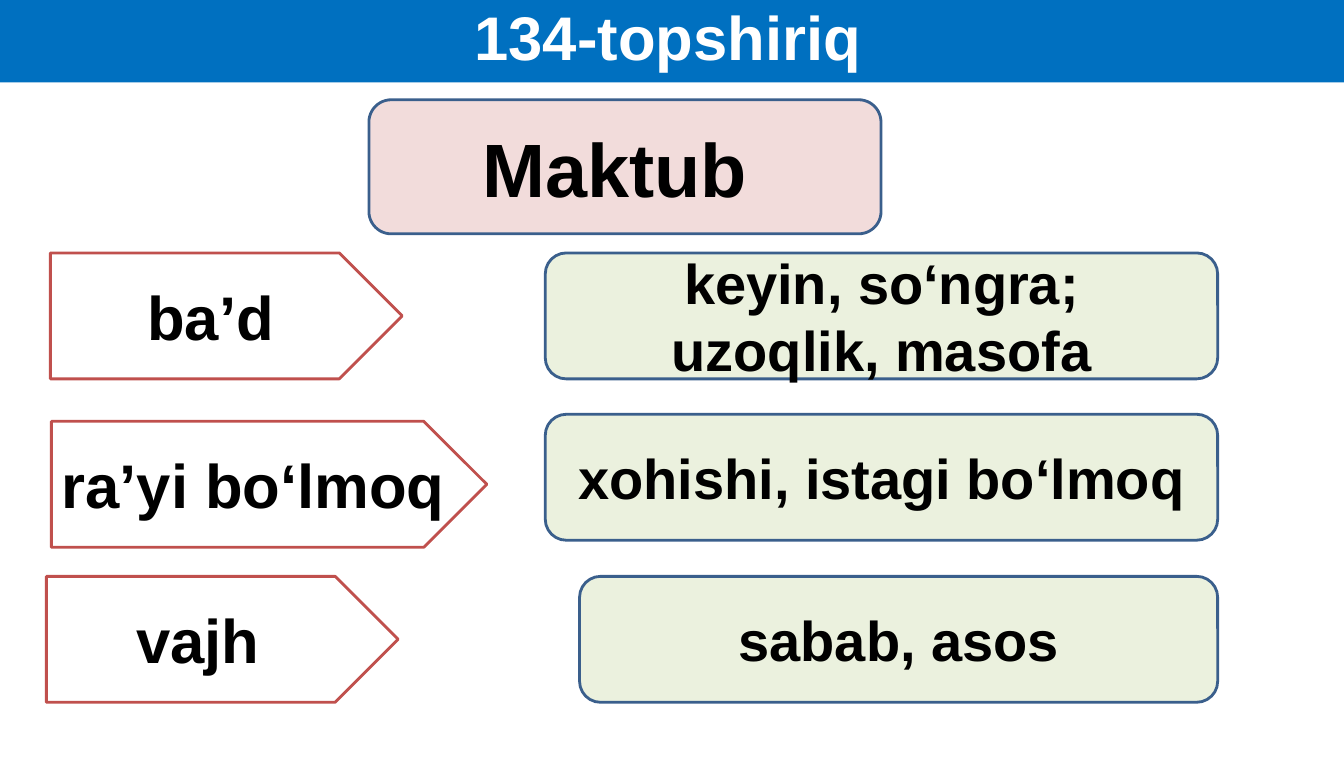
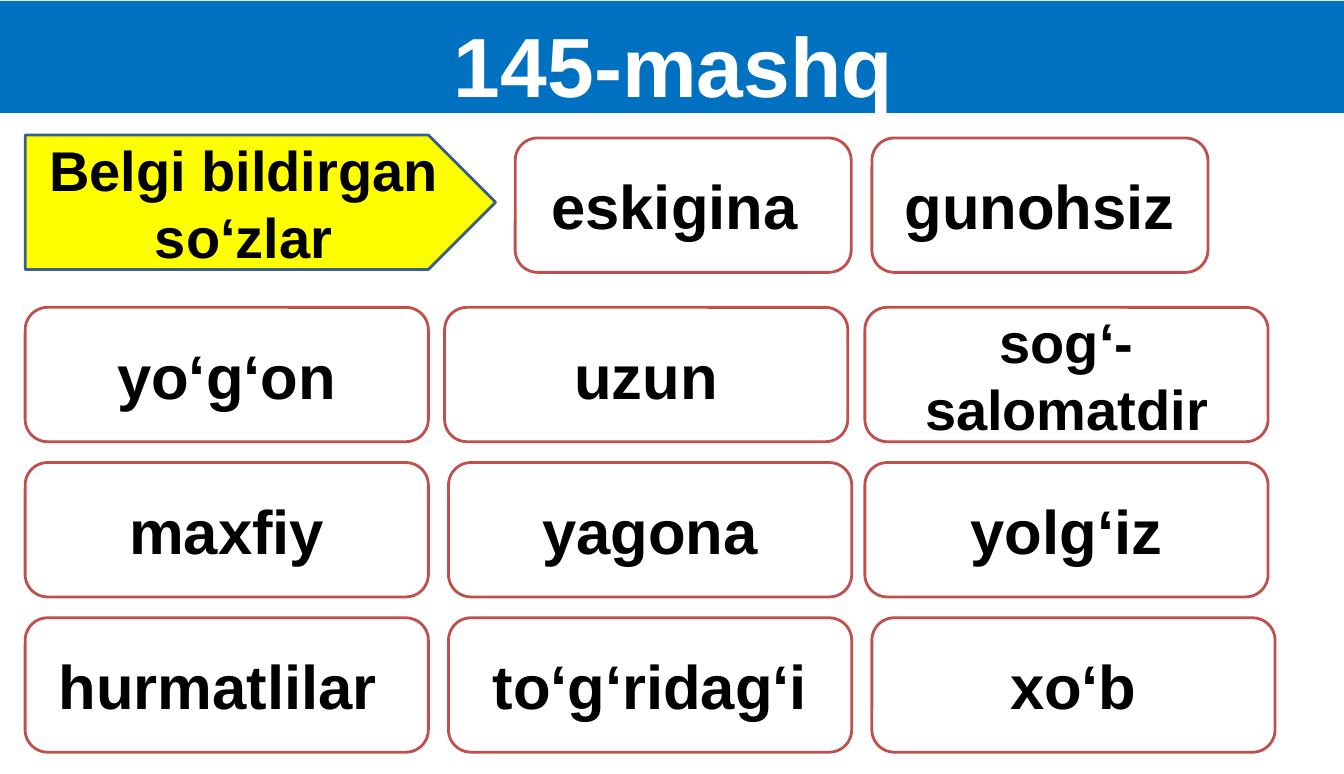
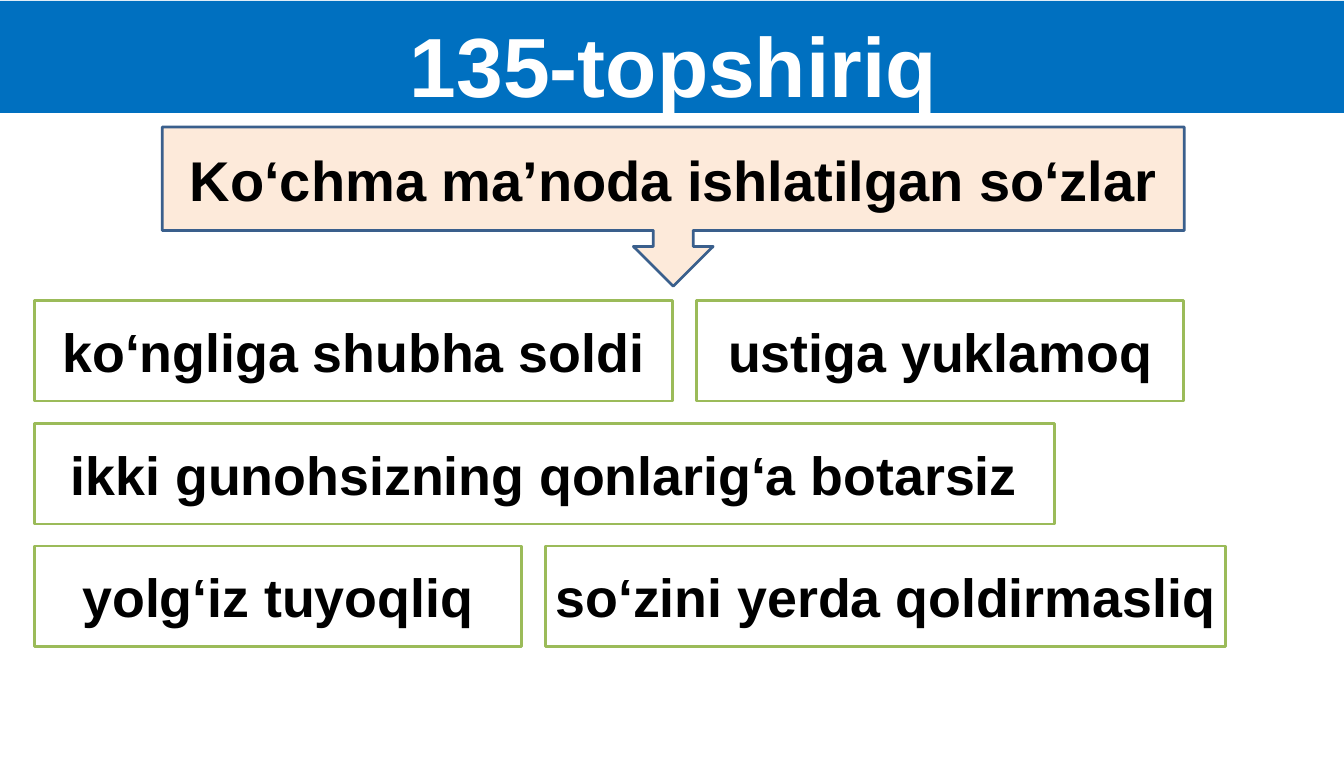
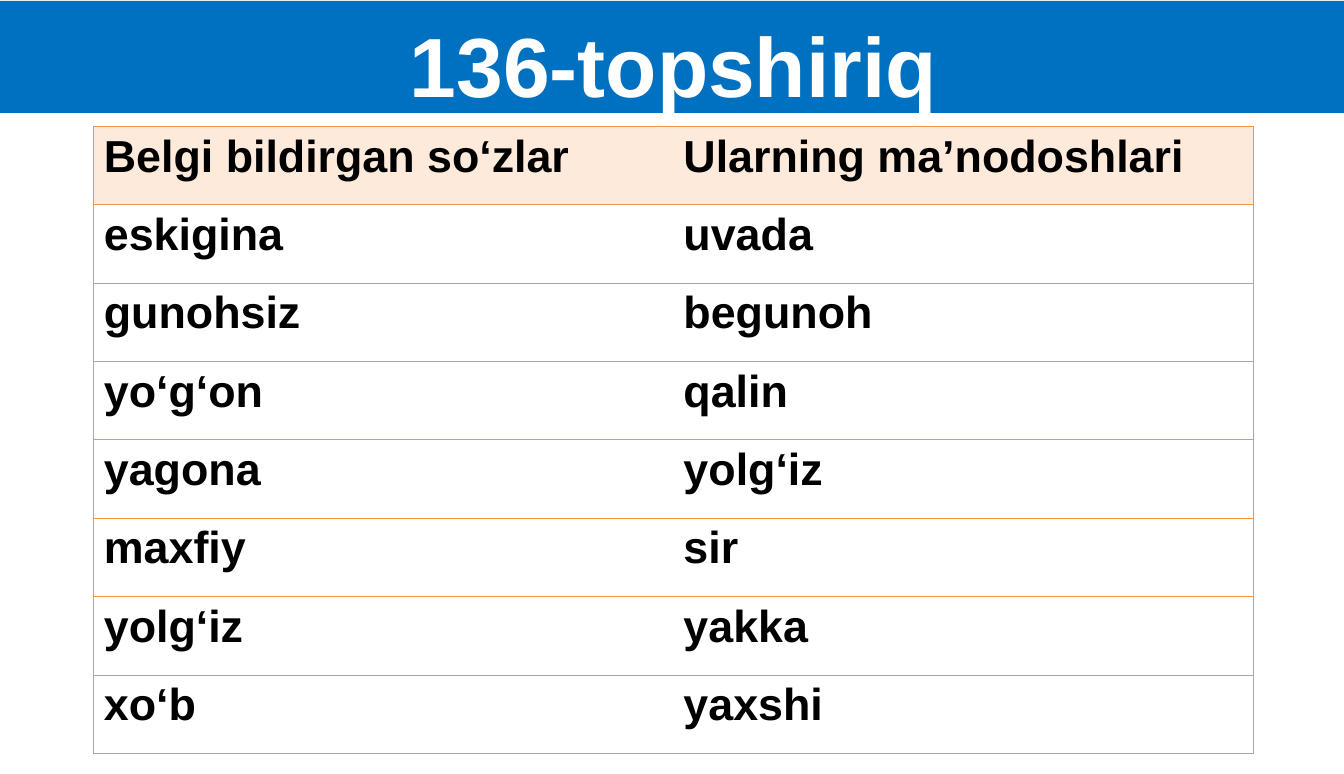
import pptx
import pptx.dml.color
import pptx.enum.shapes
import pptx.enum.text
import pptx.oxml
import pptx.oxml.ns
import pptx.util

Pt = pptx.util.Pt
Kind = pptx.enum.shapes.MSO_SHAPE
Anchor = pptx.enum.text.MSO_ANCHOR
Align = pptx.enum.text.PP_ALIGN


class Theme:
    face = "Arial"
    white, black = "FFFFFF", "000000"
    blue, navy, red, green = "0070C0", "3A5F8C", "C0504D", "9BBB59"
    pink, lime, peach, yellow = "F2DCDB", "EBF1DE", "FDEADA", "FFFF00"
    orange, grey = "F69240", "A6A6A6"
    huge, big, head, word, note, small = 60, 54, 44, 40, 38.4, 32
    edge, rule = 2, 0.75


def color(code):
    return pptx.dml.color.RGBColor.from_string(code)


def apply(target, form):
    for name, value in form.items():
        setattr(target, name, value)


class Deck:
    def __init__(self, wide, high):
        self.file = pptx.Presentation()
        apply(self.file, {"slide_width": Pt(wide), "slide_height": Pt(high)})
        self.slide = None

    def page(self):
        self.slide = self.file.slides.add_slide(self.file.slide_layouts[6])

    def label(self, frame, text, size, ink=Theme.black, align=Align.CENTER):
        frame.text = text
        for para in frame.paragraphs:
            para.alignment = align
            apply(para.font, {"name": Theme.face, "size": Pt(size), "bold": True})
            para.font.color.rgb = color(ink)

    def pad(self, frame, side, top, low, anchor):
        apply(frame, {
            "word_wrap": True, "vertical_anchor": anchor,
            "margin_left": Pt(side), "margin_right": Pt(side),
            "margin_top": Pt(top), "margin_bottom": Pt(low),
        })

    def shape(self, kind, area, fill, edge=None):
        item = self.slide.shapes.add_shape(kind, *map(Pt, area))
        item.shadow.inherit = False
        item.fill.solid()
        item.fill.fore_color.rgb = color(fill)
        if edge:
            item.line.width = Pt(Theme.edge)
            item.line.color.rgb = color(edge)
        else:
            item.line.fill.background()
        return item

    def card(self, kind, area, text, size, fill=Theme.white, edge=Theme.navy):
        frame = self.shape(kind, area, fill, edge).text_frame
        self.pad(frame, 6, 3.6, 3.6, Anchor.MIDDLE)
        self.label(frame, text, size)

    def title(self, frame, text, size, top):
        self.pad(frame, 0, top, 0, Anchor.TOP)
        self.label(frame, text, size, Theme.white)

    def band(self, text):
        item = self.shape(Kind.RECTANGLE, (0, 0.7, 962, 79.9), Theme.blue)
        self.title(item.text_frame, text, Theme.huge, 9)

    def high_band(self, text):
        self.shape(Kind.RECTANGLE, (-1.4, -10.8, 961.4, 69.8), Theme.blue)
        box = self.slide.shapes.add_textbox(*map(Pt, (-1.4, -6.5, 956.9, 54.7)))
        self.title(box.text_frame, text, Theme.head, 6)

    def border(self, cell, side, ink):
        space = pptx.oxml.ns.nsdecls("a")
        paint = "<a:noFill/>"
        if ink:
            paint = f'<a:solidFill><a:srgbClr val="{ink}"/></a:solidFill>'
        line = f'<a:ln{side} {space} w="{Pt(Theme.rule)}">{paint}</a:ln{side}>'
        cell._tc.get_or_add_tcPr().append(pptx.oxml.parse_xml(line))

    def table(self, area, rows, rules):
        count, width = len(rows), len(rows[0])
        grid = self.slide.shapes.add_table(count, width, *map(Pt, area)).table
        apply(grid, {"first_row": False, "horz_banding": False})
        for i, row in enumerate(rows):
            for j, text in enumerate(row):
                cell = grid.cell(i, j)
                sides = {
                    "L": None if j else Theme.grey,
                    "R": Theme.grey if j == width - 1 else None,
                    "T": rules[i], "B": rules[i + 1],
                }
                for side, ink in sides.items():
                    self.border(cell, side, ink)
                cell.fill.solid()
                cell.fill.fore_color.rgb = color(Theme.white if i else Theme.peach)
                self.label(cell.text_frame, text, Theme.small, align=Align.LEFT)


def letter(deck):
    deck.page()
    deck.high_band("134-topshiriq")
    deck.card(Kind.ROUNDED_RECTANGLE, (263.5, 71.3, 365.8, 95.8),
              "Maktub ", Theme.big, Theme.pink)
    terms = [
        (36, 180.7, 251.3, "ba’d"),
        (36.7, 301, 311, "ra’yi bo‘lmoq "),
        (33.1, 411.8, 251.3, "vajh "),
    ]
    for left, top, wide, text in terms:
        deck.card(Kind.PENTAGON, (left, top, wide, 90), text, Theme.head,
                  edge=Theme.red)
    senses = [
        (389.5, 180.7, "keyin, so‘ngra;\nuzoqlik, masofa"),
        (389.5, 296, "xohishi, istagi bo‘lmoq"),
        (414, 411.8, "sabab, asos"),
    ]
    right = 869.8
    for left, top, text in senses:
        deck.card(Kind.ROUNDED_RECTANGLE, (left, top, right - left, 90), text,
                  Theme.word, Theme.lime)


def traits(deck):
    deck.page()
    deck.band("145-mashq")
    deck.card(Kind.PENTAGON, (18, 96.5, 336, 96), "Belgi bildirgan so‘zlar",
              Theme.word, Theme.yellow)
    rows = [
        (98.6, 240, [(368, "eskigina "), (622.8, "gunohsiz")]),
        (219.6, 288, [(18, "yo‘g‘on"), (317.6, "uzun"), (617.8, "sog‘-salomatdir")]),
        (330.5, 288, [(18, "maxfiy"), (320.4, "yagona"), (617.8, "yolg‘iz")]),
        (441.4, 288, [(18, "hurmatlilar "), (320.4, "to‘g‘ridag‘i"), (622.8, "xo‘b")]),
    ]
    for top, wide, words in rows:
        for left, text in words:
            size = Theme.word if "-" in text else Theme.head
            deck.card(Kind.ROUNDED_RECTANGLE, (left, top, wide, 96), text, size,
                      edge=Theme.red)


def idioms(deck):
    deck.page()
    deck.band("135-topshiriq")
    deck.card(Kind.DOWN_ARROW_CALLOUT, (115.9, 90.7, 730, 113.8),
              "Ko‘chma ma’noda ishlatilgan so‘zlar", Theme.word, Theme.peach)
    rows = [
        [(456, "ko‘ngliga shubha soldi"), (348, "ustiga yuklamoq")],
        [(728.6, "ikki gunohsizning qonlarig‘a botarsiz")],
        [(348, "yolg‘iz tuyoqliq"), (486, "so‘zini yerda qoldirmasliq")],
    ]
    for i, row in enumerate(rows):
        left = 24.5
        for wide, text in row:
            deck.card(Kind.RECTANGLE, (left, 214.6 + 87.8 * i, wide, 72), text,
                      Theme.note, edge=Theme.green)
            left += wide + 17


def pairs(deck):
    deck.page()
    deck.band("136-topshiriq")
    rows = [
        ("Belgi bildirgan so‘zlar", "Ularning ma’nodoshlari"),
        ("eskigina", "uvada"),
        ("gunohsiz", "begunoh"),
        ("yo‘g‘on", "qalin"),
        ("yagona", "yolg‘iz"),
        ("maxfiy", "sir"),
        ("yolg‘iz", "yakka"),
        ("xo‘b", "yaxshi"),
    ]
    bright = {0, 1, 4, 5, 6}
    rules = [Theme.orange if i in bright else Theme.grey
             for i in range(len(rows) + 1)]
    deck.table((67, 90.4, 828, 448), rows, rules)


def main():
    deck = Deck(960, 553)
    for build in (letter, traits, idioms, pairs):
        build(deck)
    deck.file.save("out.pptx")


if __name__ == "__main__":
    main()
